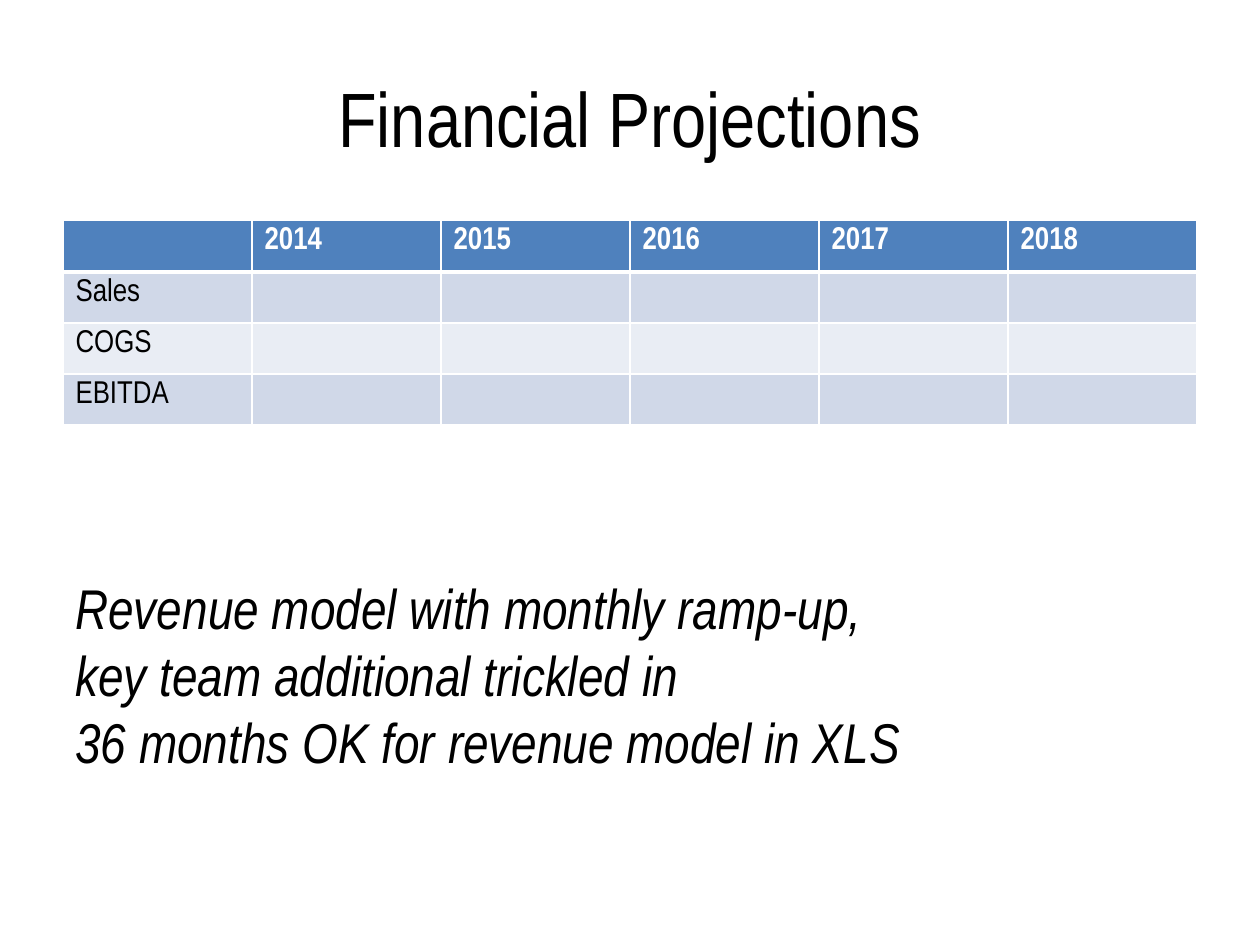
from lxml import etree
from pptx import Presentation
from pptx import util as u
from pptx.dml import color
from pptx.enum import text
from pptx.oxml import ns

TITLE = ["Financial Projections"]
TABLE = [
    ["", "2014", "2015", "2016", "2017", "2018"],
    ["Sales", "", "", "", "", ""],
    ["COGS", "", "", "", "", ""],
    ["EBITDA", "", "", "", "", ""],
]
NOTES = [
    "Revenue model with monthly ramp-up,",
    "key team additional trickled in",
    "36 months OK for revenue model in XLS",
]
BLACK, WHITE = "000000", "FFFFFF"
HEADER_FILL = "4F81BD"
BAND_FILLS = ["D0D8E8", "E9EDF4"]
LEFT, WIDTH = 1.27, 22.86
ROW_HEIGHT = 1.03

TITLE_FONT = {"size": u.Pt(44)}
HEADER_FONT = {"size": u.Pt(18), "bold": True}
BODY_FONT = {"size": u.Pt(18), "bold": False}
NOTES_FONT = {"size": u.Pt(32), "italic": True}


def rgb(value):
    return color.RGBColor.from_string(value)


def write(frame, lines, font, ink=BLACK, align=text.PP_ALIGN.LEFT):
    for index, line in enumerate(lines):
        para = frame.paragraphs[0] if index == 0 else frame.add_paragraph()
        para.alignment = align
        if not line:
            para.font.size = font["size"]
            continue
        span = para.add_run()
        span.text = line
        for name, value in {"name": "Arial Narrow", **font}.items():
            setattr(span.font, name, value)
        span.font.color.rgb = rgb(ink)


def add_text(page, place, lines, font, anchor, **style):
    box = page.shapes.add_textbox(*map(u.Cm, place))
    box.text_frame.word_wrap = True
    box.text_frame.vertical_anchor = anchor
    write(box.text_frame, lines, font, **style)
    return box


def set_borders(cell, widths):
    properties = cell._tc.get_or_add_tcPr()
    for side, points in widths.items():
        line = etree.SubElement(properties, ns.qn(f"a:ln{side}"), w=str(u.Pt(points)))
        fill = etree.SubElement(line, ns.qn("a:solidFill"))
        etree.SubElement(fill, ns.qn("a:srgbClr"), val=WHITE)


def add_projections(page):
    rows, columns = len(TABLE), len(TABLE[0])
    place = map(u.Cm, (LEFT, 4.45, WIDTH, ROW_HEIGHT * rows))
    table = page.shapes.add_table(rows, columns, *place).table
    for column in table.columns:
        column.width = u.Cm(WIDTH / columns)
    for r, values in enumerate(TABLE):
        table.rows[r].height = u.Cm(ROW_HEIGHT)
        header = r == 0
        background = HEADER_FILL if header else BAND_FILLS[(r - 1) % 2]
        for c, value in enumerate(values):
            cell = table.cell(r, c)
            set_borders(cell, {"L": 1, "R": 1, "T": 3 if r == 1 else 1, "B": 3 if header else 1})
            cell.fill.solid()
            cell.fill.fore_color.rgb = rgb(background)
            write(cell.text_frame, [value], HEADER_FONT if header else BODY_FONT,
                  WHITE if header else BLACK)


def main():
    deck = Presentation()
    deck.slide_width, deck.slide_height = u.Cm(25.4), u.Cm(19.05)
    page = deck.slides.add_slide(deck.slide_layouts[6])
    add_text(page, (LEFT, 0.76, WIDTH, 3.18), TITLE, TITLE_FONT,
             text.MSO_ANCHOR.MIDDLE, align=text.PP_ALIGN.CENTER)
    add_projections(page)
    notes = add_text(page, (LEFT, 11.43, 20.52, 4.37), NOTES, NOTES_FONT, text.MSO_ANCHOR.TOP)
    notes.text_frame.auto_size = text.MSO_AUTO_SIZE.SHAPE_TO_FIT_TEXT
    deck.save("out.pptx")


if __name__ == "__main__":
    main()
